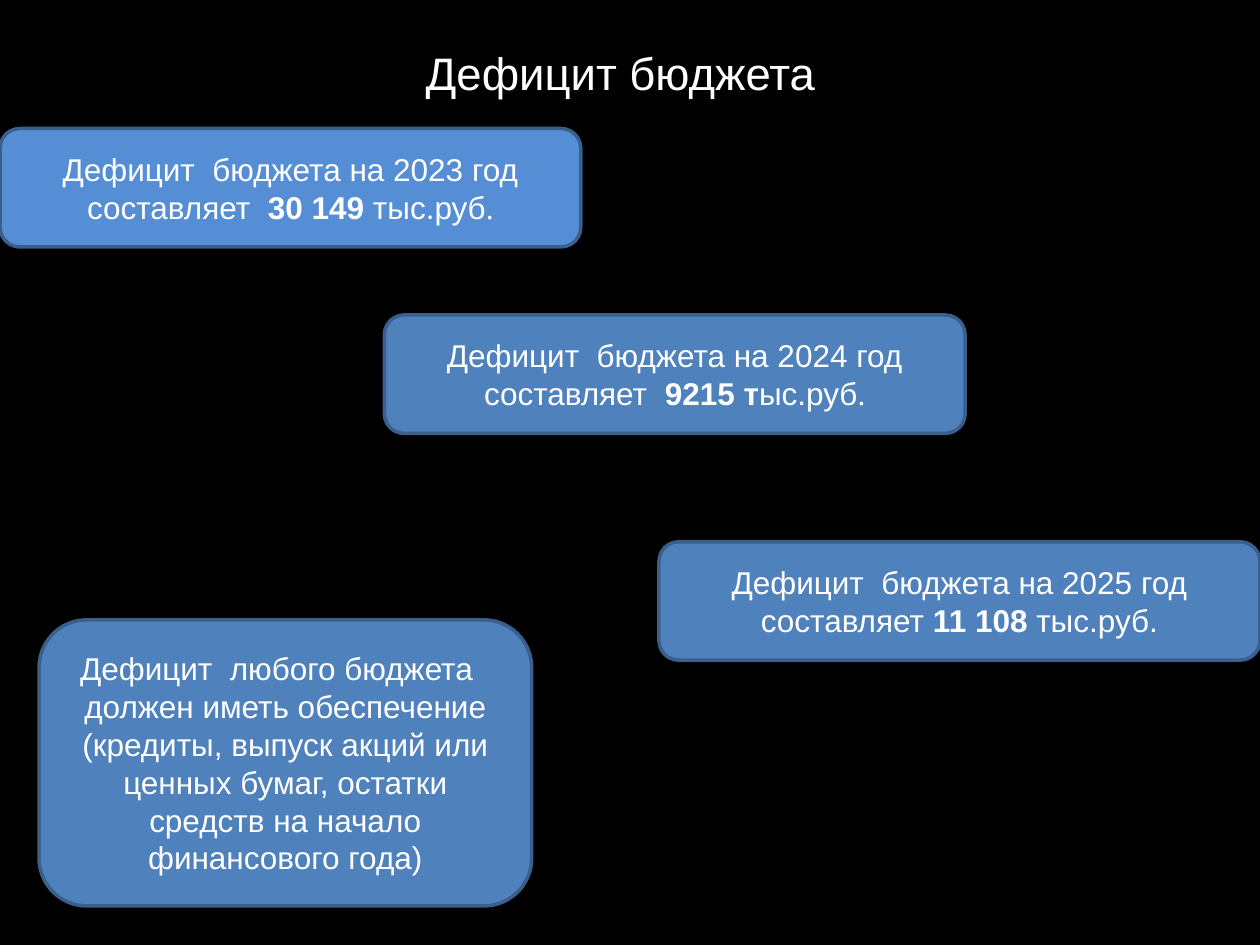
"""Build the budget deficit slide."""
from pptx import Presentation
from pptx.dml.color import RGBColor
from pptx.enum.shapes import MSO_SHAPE
from pptx.enum.text import MSO_ANCHOR, PP_ALIGN
from pptx.util import Inches, Pt

ROUNDED = MSO_SHAPE.ROUNDED_RECTANGLE
MIDDLE = MSO_ANCHOR.MIDDLE
CENTER = PP_ALIGN.CENTER

SANS, SERIF = "Arial", "Times New Roman"
BLACK, WHITE = "000000", "FFFFFF"
BLUE, LIGHT_BLUE, DARK_BLUE = "4F81BD", "558ED5", "3A5F8C"

TITLE = "Дефицит бюджета"
TITLE_BOX = (3.28, 0.31, 3.91, 0.54)

CARDS = [
    ((3.05, 2.5, 4.61, 0.94), BLUE, [
        ("Дефицит  бюджета на 2024 год составляет  ", False, SANS),
        ("9215 т", True, SANS),
        ("ыс.руб", False, SANS),
        (".", False, SERIF),
    ]),
    ((0.31, 4.92, 3.91, 2.27), BLUE, [
        ("Дефицит  любого бюджета   должен иметь обеспечение (кредиты, выпуск "
         "акций или ценных бумаг, остатки средств на начало финансового года)",
         False, SANS),
    ]),
    ((0, 1.02, 4.61, 0.94), LIGHT_BLUE, [
        ("Дефицит  бюджета на 2023 год составляет  ", False, SANS),
        ("30 149 ", True, SANS),
        ("тыс.руб", False, SANS),
        (".", False, SERIF),
    ]),
    ((5.23, 4.3, 4.77, 0.94), BLUE, [
        ("Дефицит  бюджета на 2025 год составляет ", False, SANS),
        ("11 108", True, SANS),
        (" тыс.руб.", False, SANS),
    ]),
]


def color(value):
    return RGBColor.from_string(value)


def add_run(paragraph, text, size, bold=False, font_name=SANS):
    run = paragraph.add_run()
    run.text = text
    run.font.name = font_name
    run.font.size = Pt(size)
    run.font.bold = bold
    run.font.color.rgb = color(WHITE)


def add_title(slide):
    title = slide.shapes.add_textbox(*map(Inches, TITLE_BOX))
    title.text_frame.word_wrap = True
    add_run(title.text_frame.paragraphs[0], TITLE, 26)


def add_card(slide, box, fill, runs):
    card = slide.shapes.add_shape(ROUNDED, *map(Inches, box))
    card.shadow.inherit = False
    card.fill.solid()
    card.fill.fore_color.rgb = color(fill)
    card.line.color.rgb = color(DARK_BLUE)
    card.line.width = Pt(2)
    card.text_frame.word_wrap = True
    card.text_frame.vertical_anchor = MIDDLE
    paragraph = card.text_frame.paragraphs[0]
    paragraph.alignment = CENTER
    for text, bold, font_name in runs:
        add_run(paragraph, text, 18, bold, font_name)


def main():
    presentation = Presentation()
    presentation.slide_width = Inches(10)
    presentation.slide_height = Inches(7.5)
    slide = presentation.slides.add_slide(presentation.slide_layouts[6])
    slide.background.fill.solid()
    slide.background.fill.fore_color.rgb = color(BLACK)
    add_title(slide)
    for box, fill, runs in CARDS:
        add_card(slide, box, fill, runs)
    presentation.save("out.pptx")


if __name__ == "__main__":
    main()
